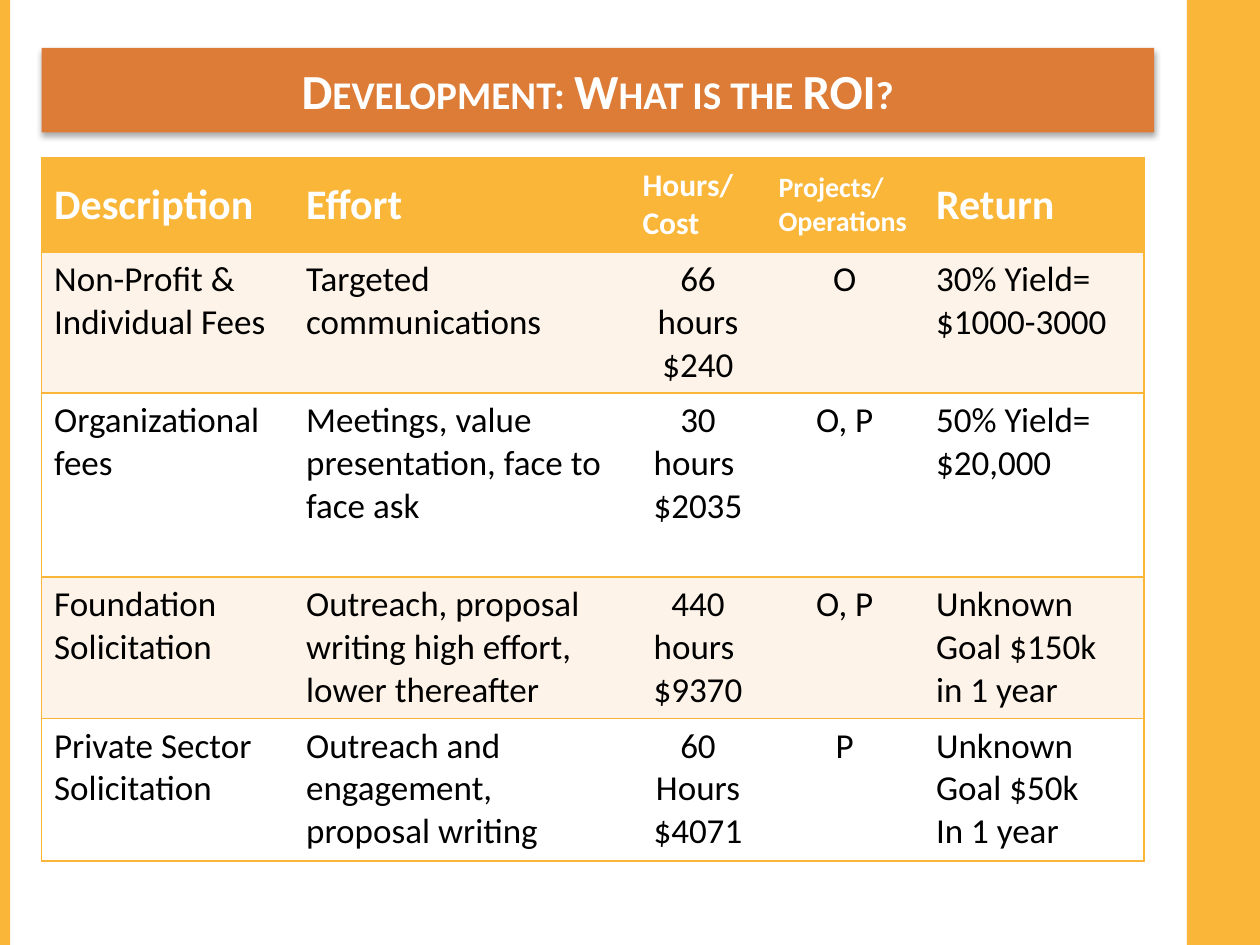
"""Build the development return-on-investment slide."""
from typing import NamedTuple

from lxml import etree
from pptx import Presentation
from pptx import util as u
from pptx.dml.color import RGBColor
from pptx.enum import shapes, text
from pptx.oxml import parse_xml
from pptx.oxml.ns import nsdecls, qn

COLORS = {"gold": "F9B639", "orange": "DD7C36", "cream": "FEF3E8",
          "white": "FFFFFF", "black": "000000"}
FONT = "Calibri"
NO_GRID_STYLE = "{2D5ABB26-0587-4C30-8999-92F81FD0307C}"


class Column(NamedTuple):
    heading: str
    width: float
    heading_size: int
    align: text.PP_ALIGN


class Activity(NamedTuple):
    height: float
    description: str
    effort: str
    cost: str
    category: str
    gain: str

    @property
    def entries(self) -> tuple:
        return self[1:]


class Bar(NamedTuple):
    left: float
    width: float


LEFT, CENTER = text.PP_ALIGN.LEFT, text.PP_ALIGN.CENTER
HEADER_HEIGHT = 0.75
BARS = [Bar(9.42, 0.58), Bar(0, 0.08)]
COLUMNS = [
    Column("Description", 2, 24, LEFT),
    Column("Effort", 2.67, 24, LEFT),
    Column("Hours/ Cost", 1.08, 18, CENTER),
    Column("Projects/ Operations", 1.25, 16, CENTER),
    Column("Return", 1.75, 24, LEFT),
]
ACTIVITIES = [
    Activity(1.12, "Non-Profit & Individual Fees", "Targeted communications",
             "66 hours\n$240", "O", "30% Yield=\n$1000-3000"),
    Activity(1.46, "Organizational fees",
             "Meetings, value presentation, face to face ask",
             "30 hours \n$2035", "O, P", "50% Yield=\n$20,000"),
    Activity(1.12, "Foundation Solicitation",
             "Outreach, proposal writing high effort, lower thereafter",
             "440 hours \n$9370", "O, P", "Unknown\nGoal $150k\nin 1 year"),
    Activity(1.13, "Private Sector Solicitation",
             "Outreach and engagement, proposal writing",
             "60 Hours\n$4071", "P", "Unknown\nGoal $50k\nIn 1 year"),
]


def rgb(name: str) -> RGBColor:
    return RGBColor.from_string(COLORS[name])


def paint(shape, color: str) -> None:
    shape.fill.solid()
    shape.fill.fore_color.rgb = rgb(color)


def style(paragraph, size: int, color: str, bold: bool, align: text.PP_ALIGN) -> None:
    paragraph.alignment = align
    font = paragraph.font
    font.name, font.size, font.bold = FONT, u.Pt(size), bold
    font.color.rgb = rgb(color)


def draw_bar(slide, bar: Bar) -> None:
    stripe = slide.shapes.add_shape(
        shapes.MSO_SHAPE.RECTANGLE, u.Inches(bar.left), 0, u.Inches(bar.width), u.Inches(7.5))
    paint(stripe, "gold")
    stripe.line.fill.background()
    stripe.shadow.inherit = False


def draw_title(slide, wording: str) -> None:
    title = slide.shapes.title
    title.left, title.top = u.Inches(0.33), u.Inches(0.38)
    title.width, title.height = u.Inches(8.83), u.Inches(0.67)
    paint(title, "orange")
    title.text_frame.text = wording
    title.text_frame.auto_size = text.MSO_AUTO_SIZE.NONE
    title.text_frame.vertical_anchor = text.MSO_ANCHOR.MIDDLE
    heading = title.text_frame.paragraphs[0]
    style(heading, 28, "white", True, CENTER)
    heading.runs[0].font._element.set("cap", "small")
    title._element.spPr.append(parse_xml(
        f'<a:effectLst {nsdecls("a")}><a:outerShdw blurRad="{u.Pt(3.5)}" dist="{u.Pt(2.2)}" '
        f'dir="5400000" rotWithShape="0"><a:srgbClr val="{COLORS["black"]}">'
        '<a:alpha val="32000"/></a:srgbClr></a:outerShdw></a:effectLst>'))


def add_borders(cell, sides: str) -> None:
    properties = cell._tc.get_or_add_tcPr()
    for position, side in enumerate(sides):
        line = etree.Element(qn(f"a:ln{side}"), w=str(u.Pt(1)))
        fill = etree.SubElement(line, qn("a:solidFill"))
        etree.SubElement(fill, qn("a:srgbClr"), val=COLORS["gold"])
        properties.insert(position, line)


def fill_cell(cell, wording: str, fill: str, size: int, color: str,
              bold: bool, align: text.PP_ALIGN) -> None:
    cell.text = wording
    paint(cell, fill)
    for paragraph in cell.text_frame.paragraphs:
        style(paragraph, size, color, bold, align)


def draw_table(slide) -> None:
    heights = [HEADER_HEIGHT] + [activity.height for activity in ACTIVITIES]
    table = slide.shapes.add_table(
        len(heights), len(COLUMNS), u.Inches(0.33), u.Inches(1.25),
        u.Inches(sum(column.width for column in COLUMNS)), u.Inches(sum(heights))).table
    table._tbl.tblPr.find(qn("a:tableStyleId")).text = NO_GRID_STYLE
    table.horz_banding = False
    for row, height in zip(table.rows, heights):
        row.height = u.Inches(height)
    last = len(COLUMNS) - 1
    for index, column in enumerate(COLUMNS):
        table.columns[index].width = u.Inches(column.width)
        sides = ("L" if index == 0 else "R" if index == last else "") + "TB"
        header = table.cell(0, index)
        fill_cell(header, column.heading, "gold", column.heading_size, "white", True, LEFT)
        header.vertical_anchor = text.MSO_ANCHOR.MIDDLE
        add_borders(header, sides)
        for row, activity in enumerate(ACTIVITIES, start=1):
            cell = table.cell(row, index)
            fill_cell(cell, activity.entries[index], "cream" if row % 2 else "white",
                      20, "black", False, column.align)
            add_borders(cell, sides)


def main() -> None:
    deck = Presentation()
    deck.slide_width, deck.slide_height = u.Inches(10), u.Inches(7.5)
    slide = deck.slides.add_slide(deck.slide_layouts.get_by_name("Title Only"))
    for bar in BARS:
        draw_bar(slide, bar)
    draw_title(slide, "Development: What is the ROI?")
    draw_table(slide)
    deck.save("out.pptx")


if __name__ == "__main__":
    main()
